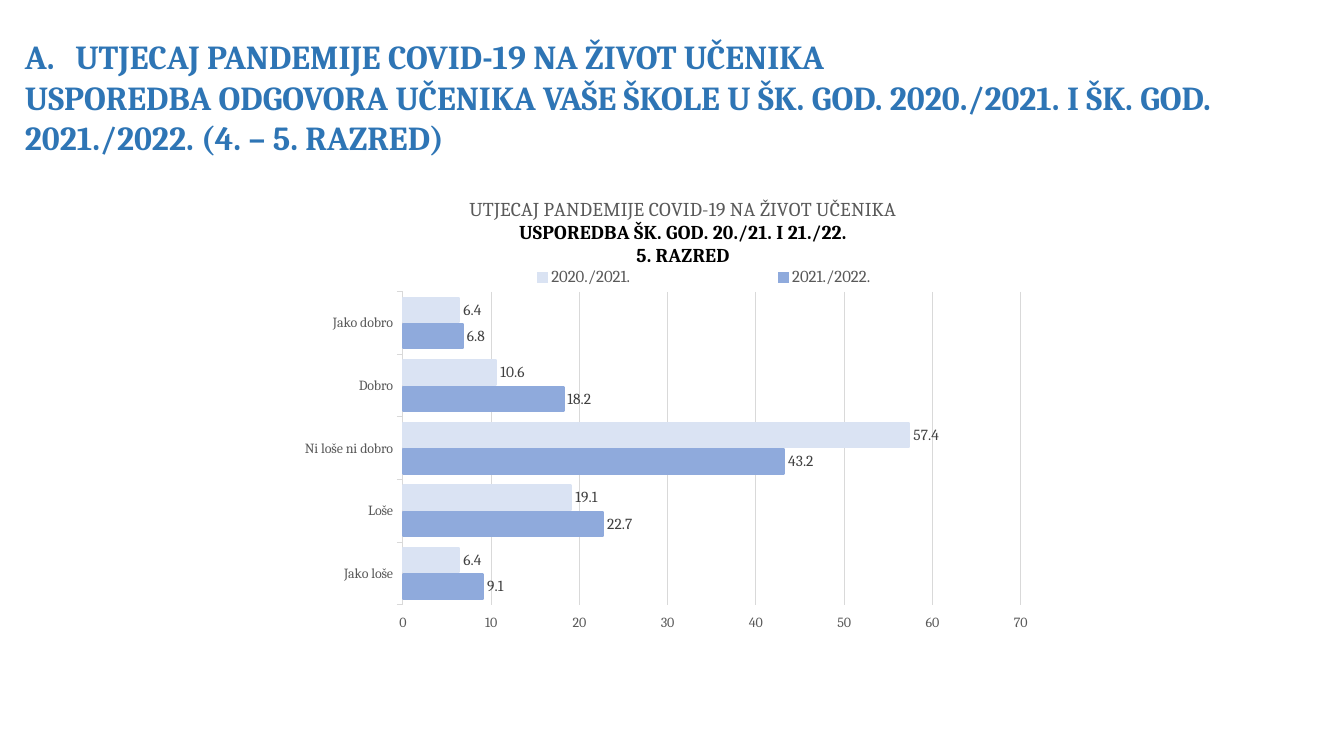
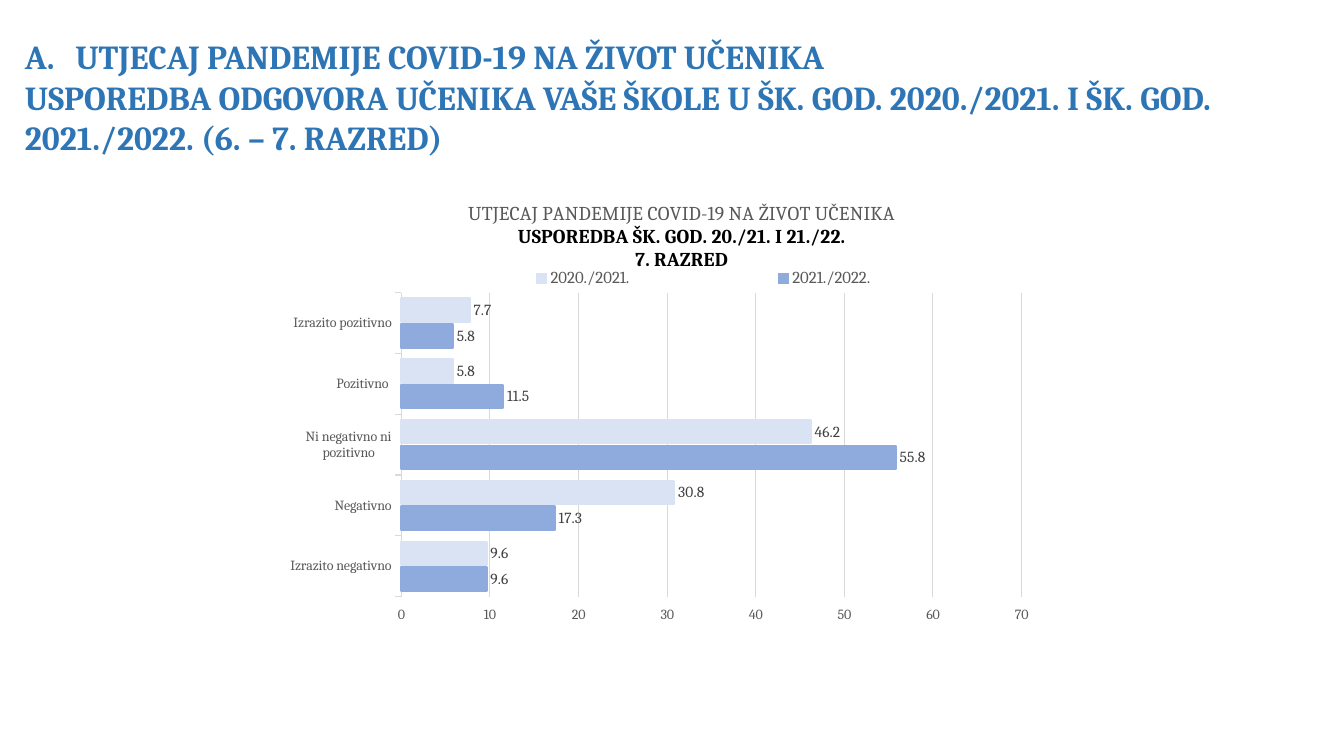
from dataclasses import dataclass

from lxml import etree
from pptx import Presentation
from pptx.chart.data import CategoryChartData
from pptx.dml.color import RGBColor as RGB
from pptx.enum.chart import XL_CHART_TYPE as ChartType
from pptx.enum.chart import XL_LABEL_POSITION as LabelPos
from pptx.enum.chart import XL_LEGEND_POSITION as LegendPos
from pptx.enum.chart import XL_TICK_MARK as Tick
from pptx.oxml.ns import qn
from pptx.util import Cm, Pt


@dataclass(frozen=True)
class Theme:
    font: str = "Cambria"
    heading: str = "2E75B5"
    black: str = "000000"
    muted: str = "595959"
    label: str = "404040"
    grid: str = "D9D9D9"
    current: str = "8FAADC"
    previous: str = "DAE3F3"
    heading_size: int = 24
    title_size: int = 14
    legend_size: int = 12
    label_size: int = 11
    axis_size: int = 10


T = Theme()
SUBJECT = "UTJECAJ PANDEMIJE COVID-19 NA ŽIVOT UČENIKA"
HEADING_BOX = (0.38, 0.79, 31.7, 3.33)
TITLE_AT = (0.24, 0.03)
LEGEND_AT = (0.15, 0.18, 0.78, 0.05)
PLOT_AT = (0.16, 0.235, 0.78, 0.653)

SLIDES = [
    dict(
        grades="4. – 5. RAZRED",
        grade="5. RAZRED",
        box=(6.96, 4.52, 19.96, 12.07),
        answers=["Jako loše", "Loše", "Ni loše ni dobro", "Dobro", "Jako dobro"],
        current=[9.1, 22.7, 43.2, 18.2, 6.8],
        previous=[6.4, 19.1, 57.4, 10.6, 6.4],
    ),
    dict(
        grades="6. – 7. RAZRED",
        grade="7. RAZRED",
        box=(6.91, 4.62, 20.04, 11.73),
        answers=["Izrazito negativno", "Negativno", "Ni negativno ni pozitivno",
                 "Pozitivno ", "Izrazito pozitivno"],
        current=[9.6, 17.3, 55.8, 11.5, 5.8],
        previous=[9.6, 30.8, 46.2, 5.8, 7.7],
    ),
]


def style(font, size, color, bold=False):
    font.name = T.font
    font.size = Pt(size)
    font.bold = bold
    font.color.rgb = RGB.from_string(color)


def add_text(tf, text, first=False, **fmt):
    p = tf.paragraphs[0] if first else tf.add_paragraph()
    r = p.add_run()
    r.text = text
    style(r.font, **fmt)
    return p


def number_paragraph(p, color):
    pPr = p._p.get_or_add_pPr()
    pPr.set("marL", str(Cm(1.27)))
    pPr.set("indent", str(-Cm(1.27)))
    clr = etree.SubElement(pPr, qn("a:buClr"))
    etree.SubElement(clr, qn("a:srgbClr"), val=color)
    etree.SubElement(pPr, qn("a:buFont"), typeface="+mj-lt")
    etree.SubElement(pPr, qn("a:buAutoNum"), type="alphaUcPeriod")


def set_layout(parent, values, inner=False):
    for old in parent.findall(qn("c:layout")):
        parent.remove(old)
    layout = etree.Element(qn("c:layout"))
    manual = etree.SubElement(layout, qn("c:manualLayout"))
    if inner:
        etree.SubElement(manual, qn("c:layoutTarget"), val="inner")
    for mode in ("xMode", "yMode"):
        etree.SubElement(manual, qn(f"c:{mode}"), val="edge")
    for key, value in zip("xywh", values):
        etree.SubElement(manual, qn(f"c:{key}"), val=str(value))
    overlay = parent.find(qn("c:overlay"))
    if overlay is None:
        parent.insert(0, layout)
    else:
        overlay.addprevious(layout)


def add_heading(s, box, grades):
    tf = s.shapes.add_textbox(*map(Cm, box)).text_frame
    tf.word_wrap = True
    fmt = dict(size=T.heading_size, color=T.heading, bold=True)
    number_paragraph(add_text(tf, SUBJECT, first=True, **fmt), T.heading)
    add_text(tf, "USPOREDBA ODGOVORA UČENIKA VAŠE ŠKOLE U ŠK. GOD. 2020./2021. "
             f"I ŠK. GOD. 2021./2022. ({grades})", **fmt)


def format_title(chart, grade):
    chart.has_title = True
    title = chart.chart_title
    tf = title.text_frame
    add_text(tf, SUBJECT, first=True, size=T.title_size, color=T.muted)
    for line in ("USPOREDBA ŠK. GOD. 20./21. I 21./22.", grade):
        add_text(tf, line, size=T.title_size, color=T.black, bold=True)
    title.include_in_layout = False
    set_layout(title._element, TITLE_AT)


def format_legend(chart):
    chart.has_legend = True
    legend = chart.legend
    legend.position = LegendPos.TOP
    legend.include_in_layout = False
    style(legend.font, T.legend_size, T.muted)
    set_layout(legend._element, LEGEND_AT)


def format_line(line, color, width):
    line.color.rgb = RGB.from_string(color)
    line.width = Pt(width)


def format_axes(chart):
    cat, val = chart.category_axis, chart.value_axis
    for axis in (cat, val):
        axis.major_tick_mark = Tick.OUTSIDE
        axis.minor_tick_mark = Tick.NONE
        style(axis.tick_labels.font, T.axis_size, T.muted)
    format_line(cat.format.line, T.grid, 0.75)
    cat.has_major_gridlines = False
    val.format.line.fill.background()
    val.minimum_scale, val.maximum_scale, val.major_unit = 0, 70, 10
    val.has_major_gridlines = True
    format_line(val.major_gridlines.format.line, T.grid, 0.75)


def format_bars(plot):
    plot.gap_width = 50
    plot.overlap = -10
    plot.vary_by_categories = False
    for series, color in zip(plot.series, (T.current, T.previous)):
        series.format.fill.solid()
        series.format.fill.fore_color.rgb = RGB.from_string(color)
        format_line(series.format.line, color, 1.5)
        labels = series.data_labels
        labels.show_value = True
        labels.position = LabelPos.OUTSIDE_END
        style(labels.font, T.label_size, T.label)


def add_comparison(s, box, grade, answers, current, previous):
    data = CategoryChartData()
    data.categories = answers
    data.add_series("2021./2022.", current)
    data.add_series("2020./2021.", previous)
    chart = s.shapes.add_chart(ChartType.BAR_CLUSTERED, *map(Cm, box), data).chart
    style(chart.font, T.axis_size, T.black)
    format_title(chart, grade)
    format_legend(chart)
    format_axes(chart)
    format_bars(chart.plots[0])
    set_layout(chart._chartSpace.find(f".//{qn('c:plotArea')}"), PLOT_AT, inner=True)


def add_survey_slide(prs, grades, **comparison):
    s = prs.slides.add_slide(prs.slide_layouts[6])
    add_heading(s, HEADING_BOX, grades)
    add_comparison(s, **comparison)


def main():
    prs = Presentation()
    prs.slide_width, prs.slide_height = Cm(33.87), Cm(19.05)
    for content in SLIDES:
        add_survey_slide(prs, **content)
    prs.save("out.pptx")


if __name__ == "__main__":
    main()
